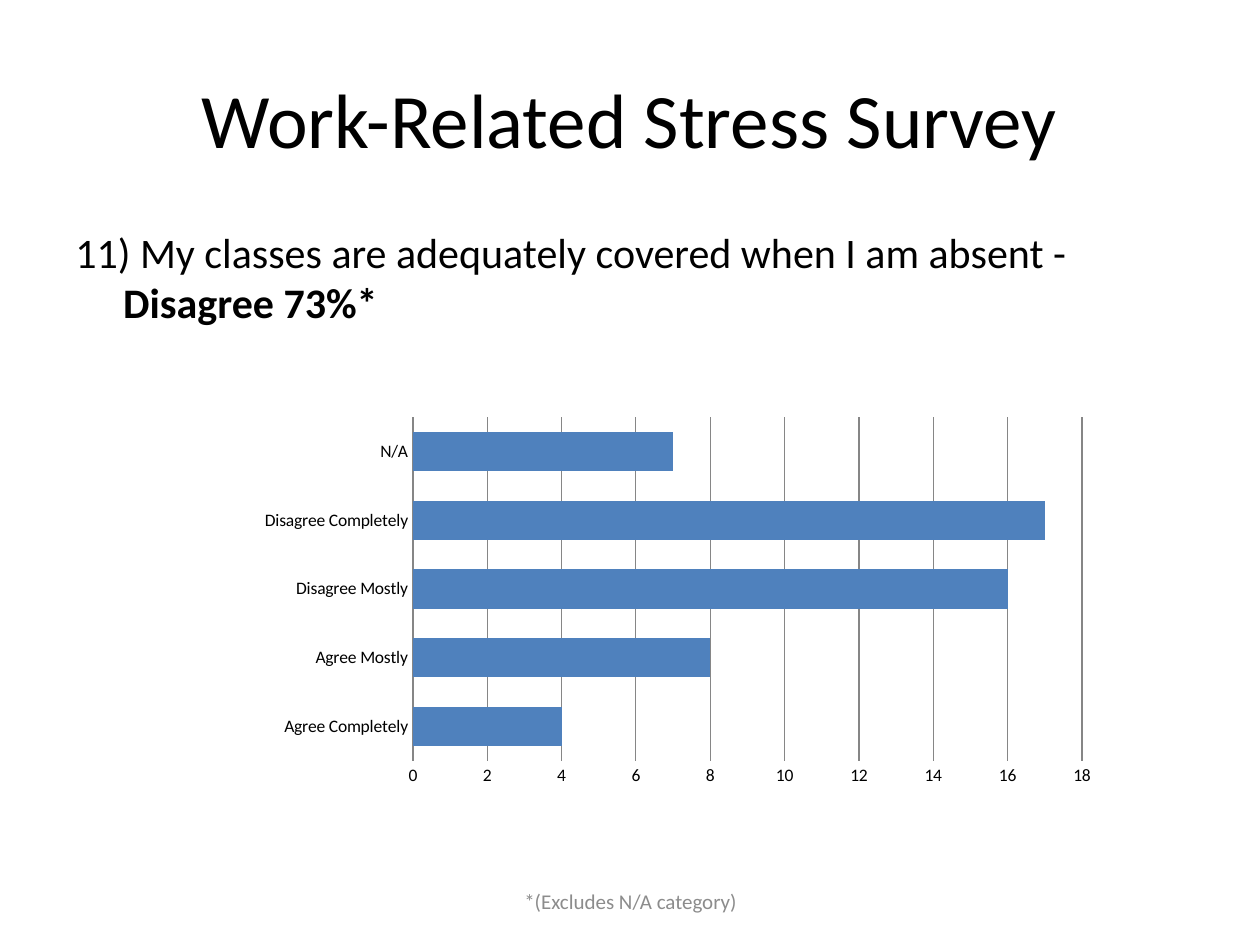
from dataclasses import dataclass

from lxml import etree
from pptx import Presentation
from pptx.chart.data import CategoryChartData
from pptx.dml.color import RGBColor
from pptx.enum.chart import XL_CHART_TYPE, XL_TICK_MARK
from pptx.enum.text import MSO_ANCHOR, PP_ALIGN
from pptx.oxml.ns import qn
from pptx.util import Inches, Pt

BAR = XL_CHART_TYPE.BAR_CLUSTERED
NO_TICK = XL_TICK_MARK.NONE
TOP, MIDDLE = MSO_ANCHOR.TOP, MSO_ANCHOR.MIDDLE
LEFT, CENTER = PP_ALIGN.LEFT, PP_ALIGN.CENTER
WIDTH, HEIGHT = Inches(10), Inches(7.5)


@dataclass(frozen=True)
class Theme:
    font: str = "Calibri"
    ink: RGBColor = RGBColor(0, 0, 0)
    muted: RGBColor = RGBColor(0x8C, 0x8C, 0x8C)
    bar: RGBColor = RGBColor(0x4F, 0x81, 0xBD)
    grid: RGBColor = RGBColor(0x86, 0x86, 0x86)
    title: int = 44
    question: int = 24
    note: int = 12
    chart: int = 10


THEME = Theme()
ANSWERS = {
    "Agree Completely": 4,
    "Agree Mostly": 8,
    "Disagree Mostly": 16,
    "Disagree Completely": 17,
    "N/A": 7,
}


def place(x, y, w, h):
    """Turn shares of the slide's size into lengths."""
    return int(x * WIDTH), int(y * HEIGHT), int(w * WIDTH), int(h * HEIGHT)


def style_font(font, size, color):
    font.name = THEME.font
    font.size = Pt(size)
    font.color.rgb = color


def add_text(slide, box, text, size, color=THEME.ink, align=CENTER, anchor=MIDDLE):
    """Add a wrapped one-paragraph text box and return the paragraph."""
    tf = slide.shapes.add_textbox(*box).text_frame
    tf.word_wrap = True
    tf.vertical_anchor = anchor
    p = tf.paragraphs[0]
    p.alignment = align
    p.add_run().text = text
    style_font(p.font, size, color)
    return p


def add_question(slide, box, question, result):
    p = add_text(slide, box, question, THEME.question, align=LEFT, anchor=TOP)
    r = p.add_run()
    r.text = result
    r.font.bold = True
    p.space_before = Pt(0.2 * THEME.question)
    hang = Inches(0.38)
    pPr = p._p.get_or_add_pPr()
    pPr.set("marL", str(hang))
    pPr.set("indent", str(-hang))


def set_plot_layout(chart, x, y, w, h):
    """Fix the inner plot area, in shares of the chart's size."""
    plot_area = chart._chartSpace.chart.plotArea
    for old in plot_area.findall(qn("c:layout")):
        plot_area.remove(old)
    layout = etree.Element(qn("c:layout"))
    manual = etree.SubElement(layout, qn("c:manualLayout"))
    settings = dict(layoutTarget="inner", xMode="edge", yMode="edge", x=x, y=y, w=w, h=h)
    for name, value in settings.items():
        etree.SubElement(manual, qn(f"c:{name}")).set("val", str(value))
    plot_area.insert(0, layout)


def add_bar_chart(slide, box, answers):
    data = CategoryChartData()
    data.categories = list(answers)
    data.add_series("Series 1", list(answers.values()))
    chart = slide.shapes.add_chart(BAR, *box, data).chart
    chart.has_legend = False
    chart.has_title = False
    style_font(chart.font, THEME.chart, THEME.ink)

    plot = chart.plots[0]
    plot.gap_width, plot.overlap = 75, -25
    plot.vary_by_categories = False
    fill = plot.series[0].format.fill
    fill.solid()
    fill.fore_color.rgb = THEME.bar

    cat_axis, val_axis = chart.category_axis, chart.value_axis
    for axis in (cat_axis, val_axis):
        axis.major_tick_mark = axis.minor_tick_mark = NO_TICK
    val_axis.minimum_scale, val_axis.maximum_scale, val_axis.major_unit = 0, 18, 2
    val_axis.has_major_gridlines = True
    val_axis.format.line.fill.background()
    for line in (cat_axis.format.line, val_axis.major_gridlines.format.line):
        line.color.rgb = THEME.grid
        line.width = Pt(0.75)
    set_plot_layout(chart, 0.28, 0.03, 0.68, 0.76)


def main():
    prs = Presentation()
    prs.slide_width, prs.slide_height = WIDTH, HEIGHT
    slide = prs.slides.add_slide(prs.slide_layouts[6])
    add_text(slide, place(0.05, 0.04, 0.9, 0.17), "Work-Related Stress Survey", THEME.title)
    add_question(slide, place(0.05, 0.233, 0.9, 0.66),
                 "11) My classes are adequately covered when I am absent - ", "Disagree 73%*")
    add_bar_chart(slide, place(0.109, 0.427, 0.781, 0.479), ANSWERS)
    add_text(slide, place(0.342, 0.927, 0.317, 0.053), "*(Excludes N/A category)",
             THEME.note, THEME.muted)
    prs.save("out.pptx")


if __name__ == "__main__":
    main()
